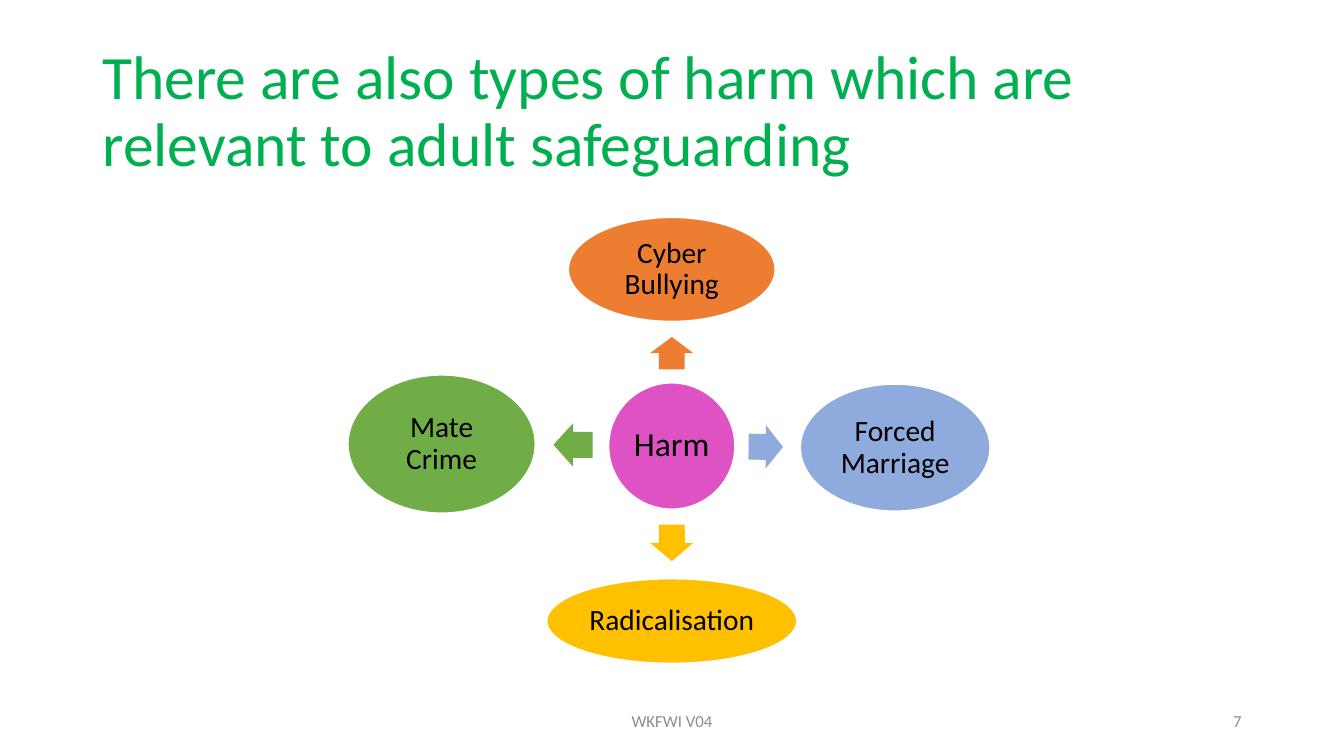
from pptx import Presentation
from pptx.dml.color import RGBColor
from pptx.enum.shapes import MSO_SHAPE
from pptx.enum.text import MSO_ANCHOR, PP_ALIGN
from pptx.util import Cm, Pt

ELLIPSE = MSO_SHAPE.OVAL
ARROW = MSO_SHAPE.RIGHT_ARROW
MIDDLE = MSO_ANCHOR.MIDDLE
LEFT, CENTER, RIGHT = PP_ALIGN.LEFT, PP_ALIGN.CENTER, PP_ALIGN.RIGHT

COLORS = {
    "title": "00B050",
    "footer": "8C8C8C",
    "text": "000000",
    "outline": "FFFFFF",
    "harm": "DE52C3",
    "cyber": "ED7D31",
    "marriage": "8FAADC",
    "radical": "FFC000",
    "mate": "70AD47",
}
CENTER_X, CENTER_Y = 16.93, 11.24
ARROW_WIDTH = 1.09


def rgb(name):
    return RGBColor.from_string(COLORS[name])


def write_text(shape, text, size, color="text", align=CENTER, spacing=0.9, inset=None):
    frame = shape.text_frame
    frame.word_wrap = True
    frame.vertical_anchor = MIDDLE
    if inset is not None:
        frame.margin_left = frame.margin_right = Cm(inset)
        frame.margin_top = frame.margin_bottom = Cm(inset)
    paragraph = frame.paragraphs[0]
    paragraph.alignment = align
    paragraph.line_spacing = spacing
    run = paragraph.add_run()
    run.text = text
    run.font.name = "Calibri"
    run.font.size = Pt(size)
    run.font.color.rgb = rgb(color)


class HarmSlide:
    """Draws the elements of the harm diagram on one slide."""

    def __init__(self, presentation):
        self.slide = presentation.slides.add_slide(presentation.slide_layouts[6])

    def label(self, text, left, top, width, height, **style):
        shape = self.slide.shapes.add_textbox(Cm(left), Cm(top), Cm(width), Cm(height))
        write_text(shape, text, **style)

    def centered_shape(self, kind, x, y, width, height, color):
        shape = self.slide.shapes.add_shape(
            kind, Cm(x - width / 2), Cm(y - height / 2), Cm(width), Cm(height)
        )
        shape.shadow.inherit = False
        shape.fill.solid()
        shape.fill.fore_color.rgb = rgb(color)
        return shape

    def bubble(self, text, x, y, width, height, color, size=21):
        shape = self.centered_shape(ELLIPSE, x, y, width, height, color)
        shape.line.color.rgb = rgb("outline")
        shape.line.width = Pt(1)
        write_text(shape, text, size, inset=0.08)

    def arrow(self, x, y, length, angle, color):
        shape = self.centered_shape(ARROW, x, y, length, ARROW_WIDTH, color)
        shape.line.fill.background()
        shape.adjustments[0] = 0.6
        shape.adjustments[1] = 0.5
        shape.rotation = angle


def main():
    presentation = Presentation()
    presentation.slide_width, presentation.slide_height = Cm(33.87), Cm(19.05)
    page = HarmSlide(presentation)
    page.label(
        "There are also types of harm which are relevant to adult safeguarding",
        2.33, 1.01, 29.21, 3.68, size=44, color="title", align=LEFT,
    )
    page.bubble("Harm", CENTER_X, CENTER_Y, 3.18, 3.18, "harm", size=24)

    harm_types = [
        ("Cyber Bullying", "cyber", (CENTER_X, 6.79, 5.21, 2.62), (CENTER_X, 8.9, 0.82, 270)),
        ("Forced Marriage", "marriage", (22.56, 11.28, 4.78, 3.2), (19.3, 11.26, 0.87, 0.4)),
        ("Radicalisation", "radical", (CENTER_X, 15.65, 6.3, 2.13), (CENTER_X, 13.68, 0.92, 89.9)),
        ("Mate Crime", "mate", (11.13, 11.19, 4.72, 3.48), (14.44, 11.21, 0.99, 180.4)),
    ]
    for text, color, bubble, arrow in harm_types:
        page.arrow(*arrow, color)
        page.bubble(text, *bubble, color)

    footer = {"size": 12, "color": "footer", "spacing": 1.0}
    page.label("WKFWI V04", 11.22, 17.66, 11.43, 1.01, align=CENTER, **footer)
    page.label("7", 23.92, 17.66, 7.62, 1.01, align=RIGHT, **footer)
    presentation.save("out.pptx")


if __name__ == "__main__":
    main()
